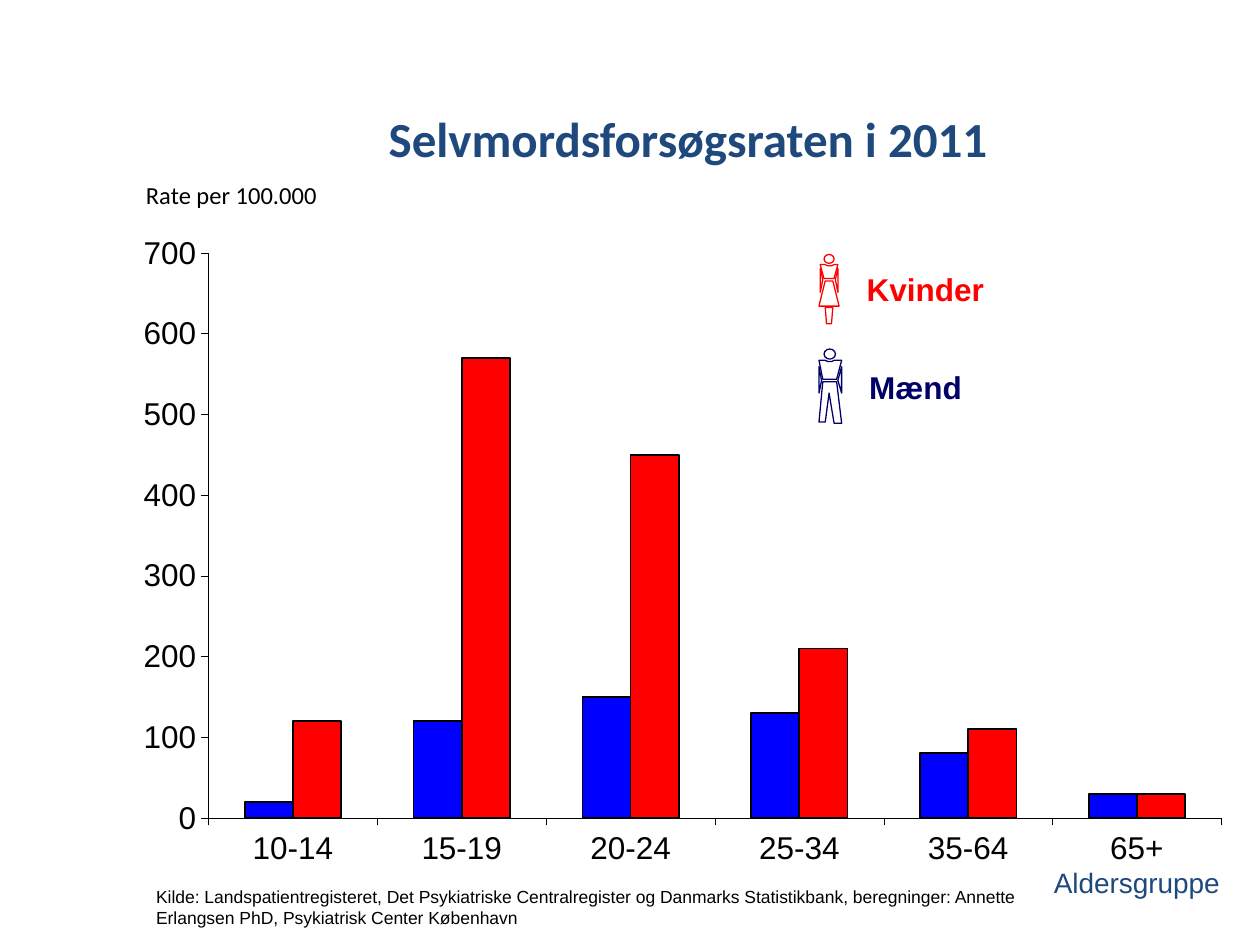
import pptx
import pptx.chart.data
import pptx.dml.color
import pptx.enum.chart
import pptx.enum.shapes
import pptx.enum.text
import pptx.util
from lxml import etree

Inches, Pt = pptx.util.Inches, pptx.util.Pt
ALIGN = pptx.enum.text.PP_ALIGN
AUTO_SIZE = pptx.enum.text.MSO_AUTO_SIZE

NAVY, BLUE, RED, TEXT_BLUE, BLACK = "000066", "0000FF", "FF0000", "1F497D", "000000"

TITLE = "Selvmordsforsøgsraten i 2011"
RATE_UNIT = "Rate per 100.000"
AGE_LABEL = "Aldersgruppe"
SOURCE = (
    "Kilde: Landspatientregisteret, Det Psykiatriske Centralregister og "
    "Danmarks Statistikbank, beregninger: Annette Erlangsen PhD, "
    "Psykiatrisk Center København"
)
AGES = ["10-14", "15-19", "20-24", "25-34", "35-64", "65+"]
RATES = [
    ("Mænd", BLUE, [20, 120, 150, 130, 80, 30]),
    ("Kvinder", RED, [120, 570, 450, 210, 110, 30]),
]
PLOT = {"x": 0.059, "y": 0.044, "w": 0.931, "h": 0.864}

FIGURES = [
    {
        "label": "Mænd", "color": NAVY, "label_box": (6.8, 2.87, 1.2, 0.4),
        "head": (6.54, 2.77, 0.09, 0.08),
        "outlines": [
            [(6.5, 2.86), (6.55, 2.86), (6.57, 2.87), (6.6, 2.87), (6.62, 2.86),
             (6.68, 2.86), (6.64, 3.01), (6.53, 3.01)],
            [(6.5, 2.91), (6.5, 3.12), (6.52, 3.02)],
            [(6.68, 2.91), (6.68, 3.12), (6.65, 3.02)],
            [(6.53, 3.03), (6.64, 3.03), (6.68, 3.36), (6.62, 3.36),
             (6.58, 3.12), (6.55, 3.35), (6.5, 3.35)],
        ],
    },
    {
        "label": "Kvinder", "color": RED, "label_box": (6.78, 2.09, 1.26, 0.4),
        "head": (6.54, 2.02, 0.08, 0.07),
        "outlines": [
            [(6.66, 2.43), (6.5, 2.43), (6.55, 2.23), (6.61, 2.23)],
            [(6.55, 2.44), (6.61, 2.44), (6.6, 2.57), (6.56, 2.57)],
            [(6.62, 2.21), (6.54, 2.21), (6.51, 2.1), (6.55, 2.1), (6.57, 2.11),
             (6.6, 2.11), (6.62, 2.1), (6.65, 2.1)],
            [(6.51, 2.32), (6.51, 2.13), (6.53, 2.22)],
            [(6.65, 2.32), (6.65, 2.13), (6.63, 2.22)],
        ],
    },
]


def rgb(color):
    return pptx.dml.color.RGBColor.from_string(color)


def inches(lengths):
    return [Inches(length) for length in lengths]


def style_font(font, name, size, color, bold=False):
    font.name, font.size, font.bold = name, Pt(size), bold
    font.color.rgb = rgb(color)


def write(frame, text, name, size, color, bold=False, align=ALIGN.LEFT):
    frame.word_wrap = True
    paragraph = frame.paragraphs[0]
    paragraph.alignment = align
    run = paragraph.add_run()
    run.text = text
    style_font(run.font, name, size, color, bold)


def add_text(shapes, box, *style, grow=True, **options):
    frame = shapes.add_textbox(*inches(box)).text_frame
    write(frame, *style, **options)
    frame.auto_size = AUTO_SIZE.SHAPE_TO_FIT_TEXT if grow else AUTO_SIZE.NONE


def outline(shape, color):
    shape.shadow.inherit = False
    shape.fill.background()
    shape.line.color.rgb = rgb(color)
    shape.line.width = Pt(0)


def add_figure(slide, figure):
    person = slide.shapes.add_group_shape().shapes
    add_text(person, figure["label_box"], figure["label"], "Arial", 18, figure["color"], bold=True)
    head = person.add_shape(pptx.enum.shapes.MSO_SHAPE.OVAL, *inches(figure["head"]))
    outline(head, figure["color"])
    for points in figure["outlines"]:
        start, *rest = [inches(point) for point in points]
        builder = person.build_freeform(*start)
        builder.add_line_segments(rest, close=True)
        outline(builder.convert_to_shape(), figure["color"])


def place_plot(chart):
    area = chart._chartSpace.chart.plotArea
    namespace = area.nsmap["c"]
    for old in area.findall(f"{{{namespace}}}layout"):
        area.remove(old)
    layout = etree.Element(f"{{{namespace}}}layout")
    manual = etree.SubElement(layout, f"{{{namespace}}}manualLayout")
    settings = {"layoutTarget": "inner", "xMode": "edge", "yMode": "edge", **PLOT}
    for tag, value in settings.items():
        etree.SubElement(manual, f"{{{namespace}}}{tag}").set("val", str(value))
    area.insert(0, layout)


def add_rate_chart(slide):
    data = pptx.chart.data.CategoryChartData(number_format="0")
    data.categories = AGES
    for name, _, rates in RATES:
        data.add_series(name, rates)
    chart = slide.shapes.add_chart(
        pptx.enum.chart.XL_CHART_TYPE.COLUMN_CLUSTERED, *inches((1.14, 1.78, 8.64, 5.19)), data
    ).chart
    chart.has_legend = False
    chart.has_title = False
    style_font(chart.font, "Arial", 18, BLACK)
    plot = chart.plots[0]
    plot.gap_width, plot.overlap, plot.vary_by_categories = 150, 0, False
    for series, (_, color, _) in zip(plot.series, RATES):
        series.invert_if_negative = False
        series.format.fill.solid()
        series.format.fill.fore_color.rgb = rgb(color)
        series.format.line.color.rgb = rgb(BLACK)
        series.format.line.width = Pt(1)
    for axis in (chart.category_axis, chart.value_axis):
        axis.has_major_gridlines = False
        axis.major_tick_mark = pptx.enum.chart.XL_TICK_MARK.OUTSIDE
        axis.minor_tick_mark = pptx.enum.chart.XL_TICK_MARK.NONE
        axis.format.line.color.rgb = rgb(BLACK)
        axis.format.line.width = Pt(0.25)
    rate_axis = chart.value_axis
    rate_axis.minimum_scale, rate_axis.maximum_scale, rate_axis.major_unit = 0, 700, 100
    rate_axis.tick_labels.number_format = "0"
    rate_axis.tick_labels.number_format_is_linked = False
    place_plot(chart)


def main():
    deck = pptx.Presentation()
    deck.slide_width, deck.slide_height = Inches(10), Inches(7.5)
    slide = deck.slides.add_slide(deck.slide_layouts[5])

    title = slide.shapes.title
    title.left, title.top, title.width, title.height = inches((1.5, 0.68, 7.92, 0.83))
    heading = title.text_frame
    heading.margin_left = heading.margin_right = heading.margin_top = heading.margin_bottom = 0
    heading.vertical_anchor = pptx.enum.text.MSO_ANCHOR.MIDDLE
    write(heading, TITLE, "Calibri", 28, TEXT_BLUE, bold=True, align=ALIGN.CENTER)

    add_rate_chart(slide)
    add_text(slide.shapes, (7.76, 6.82, 2.02, 0.37), AGE_LABEL, "Arial", 16, TEXT_BLUE, align=ALIGN.RIGHT)
    for figure in FIGURES:
        add_figure(slide, figure)
    add_text(slide.shapes, (1.14, 6.98, 7.01, 0.52), SOURCE, "Arial", 10, BLACK, grow=False)
    add_text(slide.shapes, (1.06, 1.38, 2.68, 0.34), RATE_UNIT, "Calibri", 14, BLACK)
    deck.save("out.pptx")


if __name__ == "__main__":
    main()
